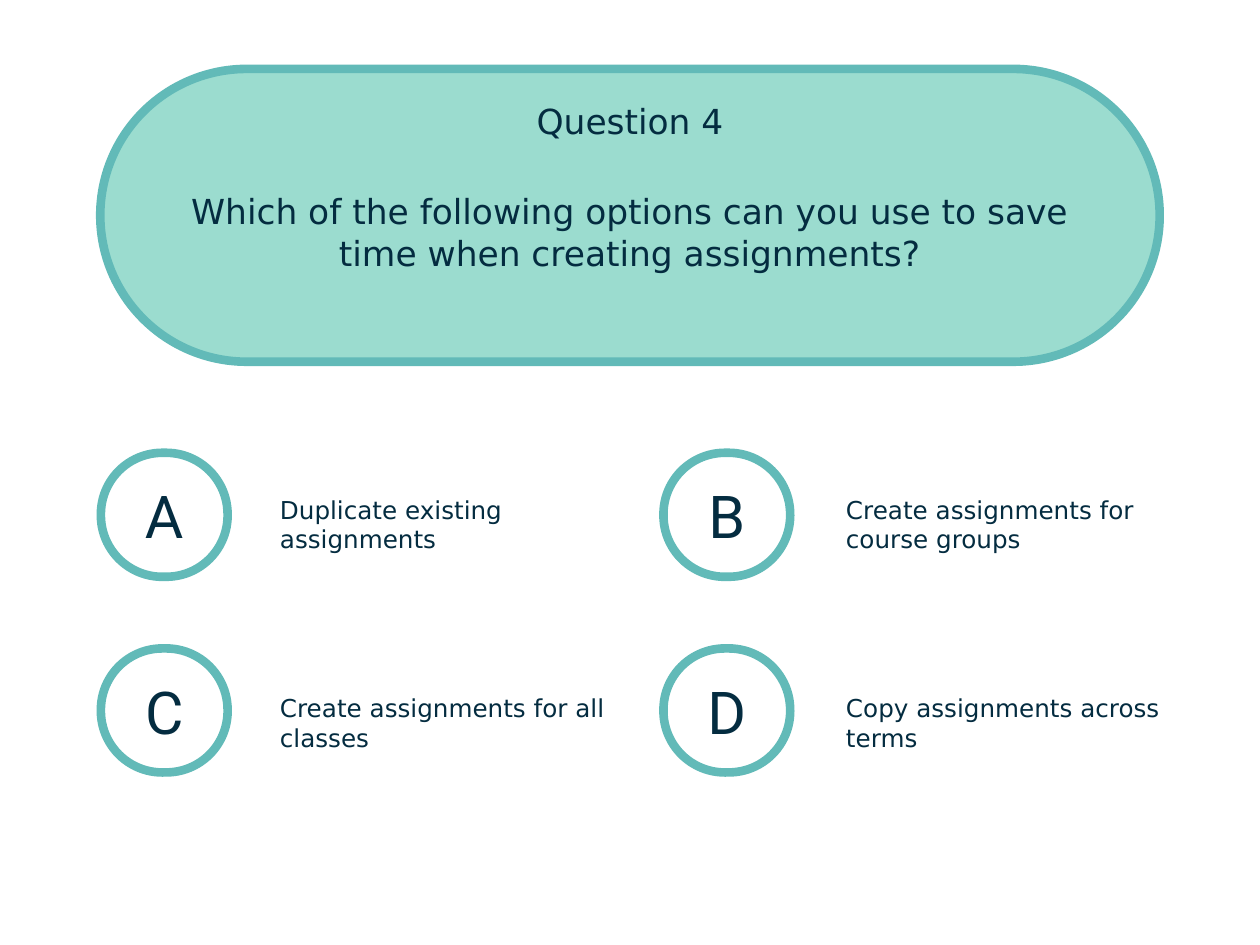
from pptx import Presentation
from pptx.dml.color import RGBColor
from pptx.enum.shapes import MSO_SHAPE
from pptx.enum.text import MSO_ANCHOR, PP_ALIGN
from pptx.util import Pt

COLORS = {"ink": "042C40", "teal": "62BAB8", "mint": "9BDCCF"}
ANSWERS = [
    ("A", "Duplicate existing assignments"),
    ("B", "Create assignments for course groups"),
    ("C", "Create assignments for all classes"),
    ("D", "Copy assignments across terms"),
]


def color(name):
    return RGBColor.from_string(COLORS[name])


def write_text(sp, text, size, font, align, inset):
    tf = sp.text_frame
    tf.word_wrap = True
    tf.margin_left = tf.margin_right = Pt(inset)
    tf.margin_top = tf.margin_bottom = Pt(inset)
    p = tf.paragraphs[0]
    p.text = text
    p.alignment = align
    r = p.runs[0]
    r.font.size = Pt(size)
    r.font.name = font
    r.font.color.rgb = color("ink")


def add_rounded(slide, left, top, width, height, fill=None):
    sp = slide.shapes.add_shape(
        MSO_SHAPE.ROUNDED_RECTANGLE, Pt(left), Pt(top), Pt(width), Pt(height)
    )
    sp.shadow.inherit = False
    sp.adjustments[0] = 0.5
    if fill:
        sp.fill.solid()
        sp.fill.fore_color.rgb = color(fill)
    else:
        sp.fill.background()
    sp.line.color.rgb = color("teal")
    sp.line.width = Pt(7)
    return sp


def add_label(slide, text, left, top, width, height, size, align=PP_ALIGN.LEFT):
    sp = slide.shapes.add_textbox(Pt(left), Pt(top), Pt(width), Pt(height))
    write_text(sp, text, size, "DejaVu Sans", align, 4.3)


def add_answer(slide, index, letter, text):
    row, col = divmod(index, 2)
    ring = add_rounded(slide, 82 + 457.2 * col, 368 + 159 * row, 103, 100.8)
    ring.adjustments[0] = 0.495
    ring.text_frame.vertical_anchor = MSO_ANCHOR.MIDDLE
    write_text(ring, letter, 48, "Roboto", PP_ALIGN.CENTER, 2.9)
    add_label(slide, text, 223.2 + 460 * col, 397.5 + 161.3 * row, 294.5, 56, 20)


def main():
    prs = Presentation()
    prs.slide_width, prs.slide_height = Pt(1024), Pt(768)
    slide = prs.slides.add_slide(prs.slide_layouts[6])
    add_rounded(slide, 81.5, 56, 861, 238, "mint")
    add_label(slide, "Question 4", 77, 77, 870, 42, 28, PP_ALIGN.CENTER)
    add_label(
        slide,
        "Which of the following options can you use to save time "
        "when creating assignments?",
        144.7, 150.5, 733.7, 76, 28, PP_ALIGN.CENTER,
    )
    for index, (letter, text) in enumerate(ANSWERS):
        add_answer(slide, index, letter, text)
    prs.save("out.pptx")


if __name__ == "__main__":
    main()
